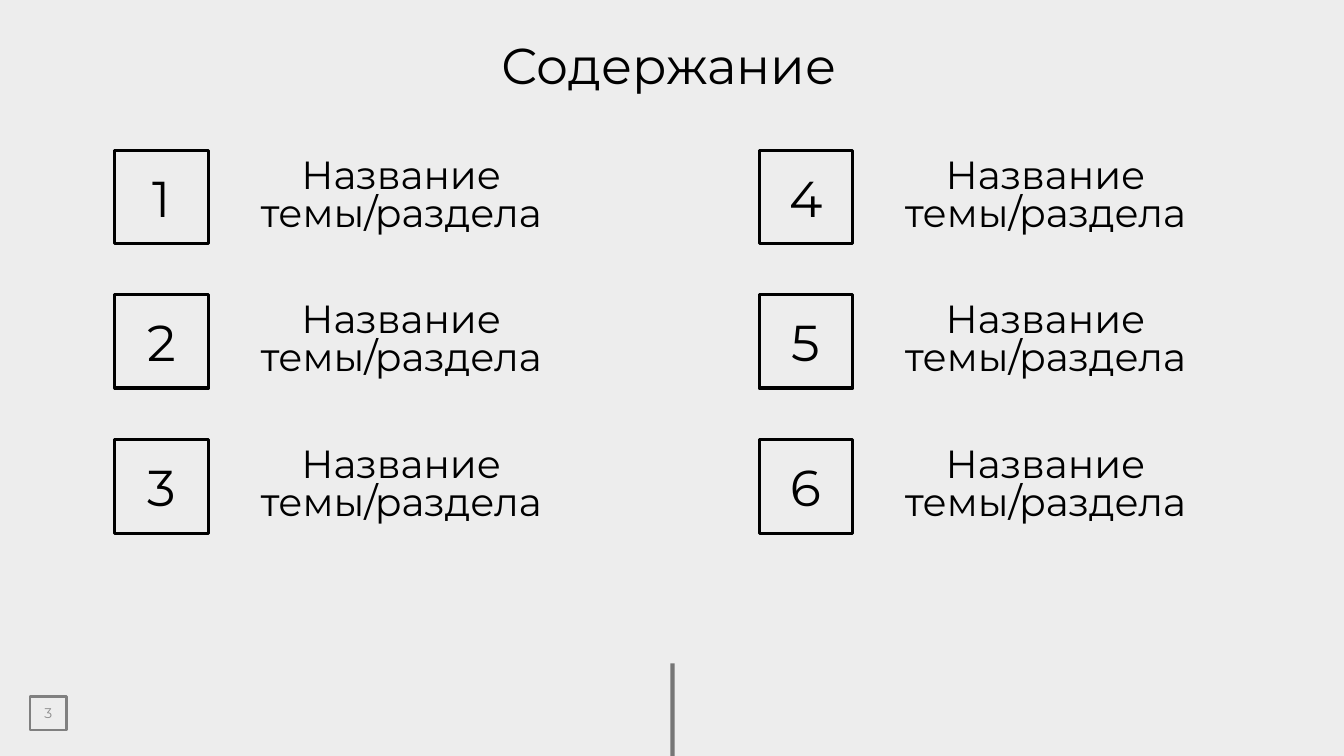
from dataclasses import dataclass
from typing import Any

from lxml import etree
from pptx import Presentation
from pptx.dml.color import RGBColor
from pptx.enum.shapes import MSO_CONNECTOR, MSO_SHAPE
from pptx.enum.text import MSO_ANCHOR, PP_ALIGN
from pptx.oxml.ns import qn
from pptx.util import Emu, Pt

RECT = MSO_SHAPE.RECTANGLE
STRAIGHT = MSO_CONNECTOR.STRAIGHT
MIDDLE = MSO_ANCHOR.MIDDLE
LEFT, CENTER = PP_ALIGN.LEFT, PP_ALIGN.CENTER
SCALE = 9144


@dataclass(frozen=True)
class Theme:
    font: str = "Montserrat"
    back: str = "EDEDED"
    ink: str = "000000"
    edge: str = "808080"
    muted: str = "8C8C8C"
    large: int = 36
    label: int = 28
    small: int = 10


@dataclass(frozen=True)
class Area:
    left: int
    top: int
    width: int
    height: int


@dataclass(frozen=True)
class Topic:
    number: int
    label: str
    left: int
    top: int


THEME = Theme()
SIDE = 93
ROWS = 3
COLUMNS = (114, 753)
TOPICS = [
    Topic(col * ROWS + row + 1, "Название темы/раздела", left, round(149 + row * 143.5))
    for col, left in enumerate(COLUMNS)
    for row in range(ROWS)
]


def px(count: int) -> Emu:
    return Emu(count * SCALE)


def place(area: Area) -> tuple[Emu, Emu, Emu, Emu]:
    return px(area.left), px(area.top), px(area.width), px(area.height)


def write(shape: Any, text: str, size: int, color: str, align: PP_ALIGN, spacing: float) -> None:
    frame = shape.text_frame
    frame.text = text
    frame.word_wrap = True
    frame.vertical_anchor = MIDDLE
    para = frame.paragraphs[0]
    para.alignment = align
    para.line_spacing = spacing
    font = para.runs[0].font
    font.name = THEME.font
    font.size = Pt(size)
    font.color.rgb = RGBColor.from_string(color)


def add_text(slide: Any, area: Area, text: str, size: int, align: PP_ALIGN, spacing: float) -> None:
    box = slide.shapes.add_textbox(*place(area))
    write(box, text, size, THEME.ink, align, spacing)


def add_box(slide: Any, area: Area, text: str, size: int, color: str, edge: str, weight: float) -> None:
    box = slide.shapes.add_shape(RECT, *place(area))
    box.shadow.inherit = False
    box.fill.background()
    box.line.color.rgb = RGBColor.from_string(edge)
    box.line.width = Pt(weight)
    write(box, text, size, color, CENTER, 1.0)


def add_mark(slide: Any) -> None:
    mark = slide.shapes.add_connector(STRAIGHT, px(667), px(658), px(667), px(750))
    mark.line.color.rgb = RGBColor.from_string(THEME.ink)
    mark.line.width = Pt(3)
    props = mark._element.spPr
    tint = props.find(".//" + qn("a:srgbClr"))
    etree.SubElement(tint, qn("a:alpha")).set("val", "50000")
    etree.SubElement(props, qn("a:effectLst"))


def add_topic(slide: Any, topic: Topic) -> None:
    square = Area(topic.left, topic.top, SIDE, SIDE)
    add_box(slide, square, str(topic.number), THEME.large, THEME.ink, THEME.ink, 2.25)
    label = Area(topic.left + 134, topic.top, 300, SIDE)
    add_text(slide, label, topic.label, THEME.label, CENTER, 0.8)


def main() -> None:
    deck = Presentation()
    deck.slide_width, deck.slide_height = px(1333), px(750)
    slide = deck.slides.add_slide(deck.slide_layouts[6])
    fill = slide.background.fill
    fill.solid()
    fill.fore_color.rgb = RGBColor.from_string(THEME.back)
    add_mark(slide)
    add_box(slide, Area(30, 691, 36, 33), "3", THEME.small, THEME.muted, THEME.edge, 1.5)
    add_text(slide, Area(488, 21, 358, 93), "Содержание", THEME.large, LEFT, 0.9)
    for topic in TOPICS:
        add_topic(slide, topic)
    deck.save("out.pptx")


if __name__ == "__main__":
    main()
